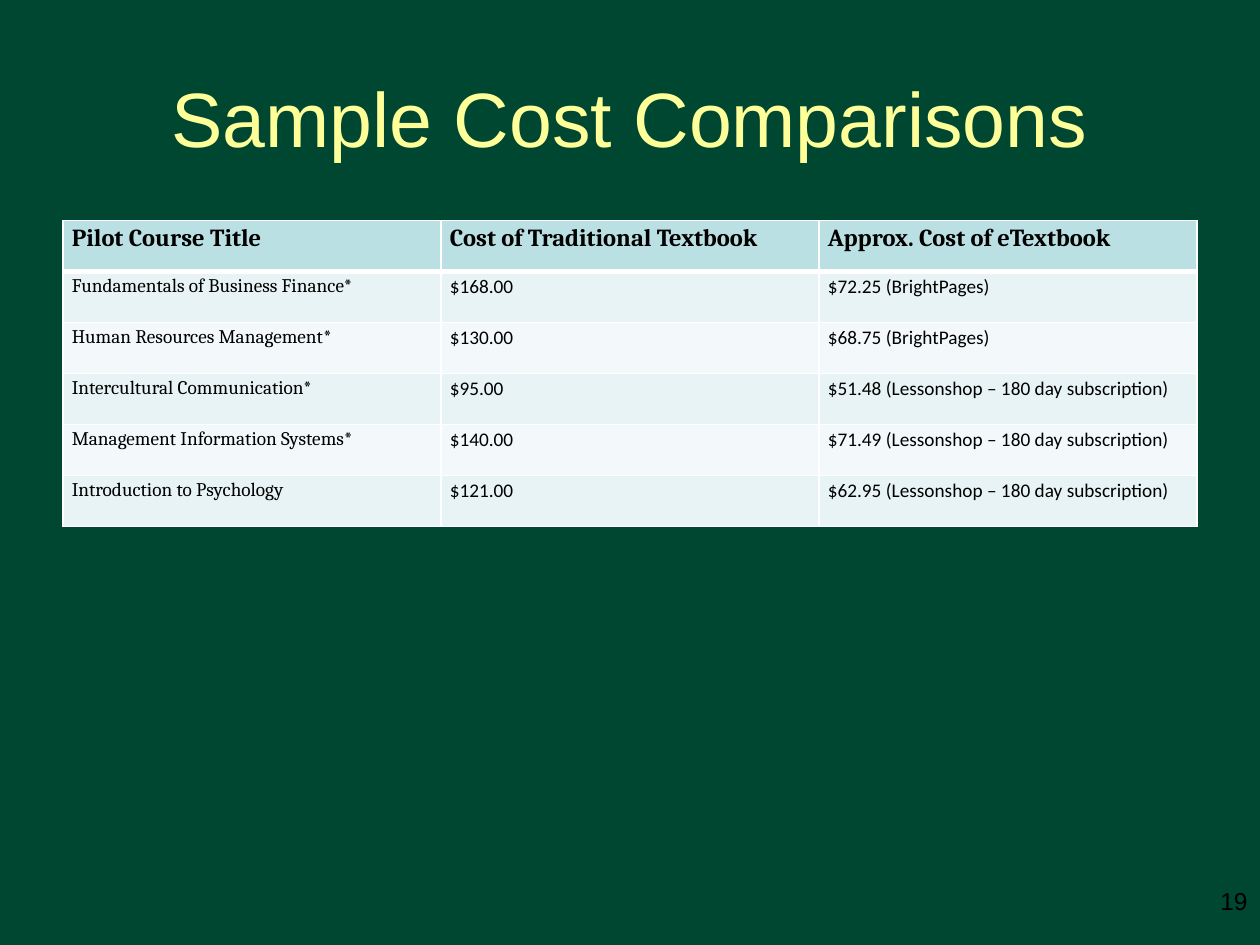
from dataclasses import dataclass

from lxml import etree
from pptx import Presentation
from pptx.dml.color import RGBColor
from pptx.enum.text import MSO_ANCHOR, PP_ALIGN
from pptx.oxml.ns import qn
from pptx.util import Inches, Pt

CENTER, RIGHT = PP_ALIGN.CENTER, PP_ALIGN.RIGHT
MIDDLE = MSO_ANCHOR.MIDDLE
TITLE_ONLY = 5


@dataclass(frozen=True)
class Theme:
    background: str = "004731"
    title: str = "FFFF99"
    text: str = "000000"
    border: str = "FFFFFF"
    header_fill: str = "BBE0E3"
    band_fills: tuple = ("E7F3F4", "F3F9FA")
    title_font: str = "Arial"
    heading_font: str = "Cambria"
    value_font: str = "Calibri"
    title_size: int = 44
    header_size: int = 14
    body_size: int = 11
    number_size: int = 14
    border_width: int = 1
    header_rule_width: int = 3
    line_spacing: float = 1.15


THEME = Theme()

COST_ROWS = [
    ("Pilot Course Title", "Cost of Traditional Textbook", "Approx. Cost of eTextbook"),
    ("Fundamentals of Business Finance*", "$168.00", "$72.25 (BrightPages)"),
    ("Human Resources Management*", "$130.00", "$68.75 (BrightPages)"),
    ("Intercultural Communication*", "$95.00", "$51.48 (Lessonshop – 180 day subscription)"),
    ("Management Information Systems*", "$140.00", "$71.49 (Lessonshop – 180 day subscription)"),
    ("Introduction to Psychology", "$121.00", "$62.95 (Lessonshop – 180 day subscription)"),
]


def add_run(paragraph, text, font, size, color, bold=False):
    run = paragraph.add_run()
    run.text = text
    run.font.name = font
    run.font.size = Pt(size)
    run.font.bold = bold
    run.font.color.rgb = RGBColor.from_string(color)


def place_title(slide, box, text):
    title = slide.shapes.title
    title.left, title.top, title.width, title.height = box
    frame = title.text_frame
    frame.word_wrap = True
    frame.vertical_anchor = MIDDLE
    paragraph = frame.paragraphs[0]
    paragraph.alignment = CENTER
    add_run(paragraph, text, THEME.title_font, THEME.title_size, THEME.title)


def set_borders(cell, above, below):
    """Draw the four cell edges; above and below are widths in points."""
    properties = cell._tc.get_or_add_tcPr()
    side = THEME.border_width
    for edge, width in (("L", side), ("R", side), ("T", above), ("B", below)):
        line = etree.SubElement(properties, qn(f"a:ln{edge}"), w=str(Pt(width)))
        fill = etree.SubElement(line, qn("a:solidFill"))
        etree.SubElement(fill, qn("a:srgbClr"), val=THEME.border)


def fill_cell(cell, text, row, column):
    is_header = row == 0
    thin, thick = THEME.border_width, THEME.header_rule_width
    set_borders(cell, thick if row == 1 else thin, thick if is_header else thin)
    band = THEME.band_fills[(row - 1) % len(THEME.band_fills)]
    cell.fill.solid()
    cell.fill.fore_color.rgb = RGBColor.from_string(THEME.header_fill if is_header else band)
    cell.margin_left = cell.margin_right = Inches(0.07)
    cell.margin_top = cell.margin_bottom = 0
    paragraph = cell.text_frame.paragraphs[0]
    paragraph.line_spacing = THEME.line_spacing
    font = THEME.heading_font if is_header or column == 0 else THEME.value_font
    size = THEME.header_size if is_header else THEME.body_size
    add_run(paragraph, text, font, size, THEME.text, is_header)


def add_cost_table(slide, box, rows):
    left, top, width, height = box
    table = slide.shapes.add_table(len(rows), len(rows[0]), left, top, width, height).table
    for row, texts in enumerate(rows):
        for column, text in enumerate(texts):
            fill_cell(table.cell(row, column), text, row, column)


def add_page_number(slide, box, number):
    frame = slide.shapes.add_textbox(*box).text_frame
    frame.word_wrap = True
    paragraph = frame.paragraphs[0]
    paragraph.alignment = RIGHT
    add_run(paragraph, number, THEME.title_font, THEME.number_size, THEME.text)


def inch_box(*lengths):
    return tuple(Inches(length) for length in lengths)


def main():
    deck = Presentation()
    deck.slide_width, deck.slide_height = Inches(10), Inches(7.5)
    slide = deck.slides.add_slide(deck.slide_layouts[TITLE_ONLY])
    slide.background.fill.solid()
    slide.background.fill.fore_color.rgb = RGBColor.from_string(THEME.background)
    place_title(slide, inch_box(0.5, 0.3, 9, 1.25), "Sample Cost Comparisons")
    add_cost_table(slide, inch_box(0.5, 1.75, 9, 2.43), COST_ROWS)
    add_page_number(slide, inch_box(7.67, 6.98, 2.33, 0.52), "19")
    deck.save("out.pptx")


if __name__ == "__main__":
    main()
